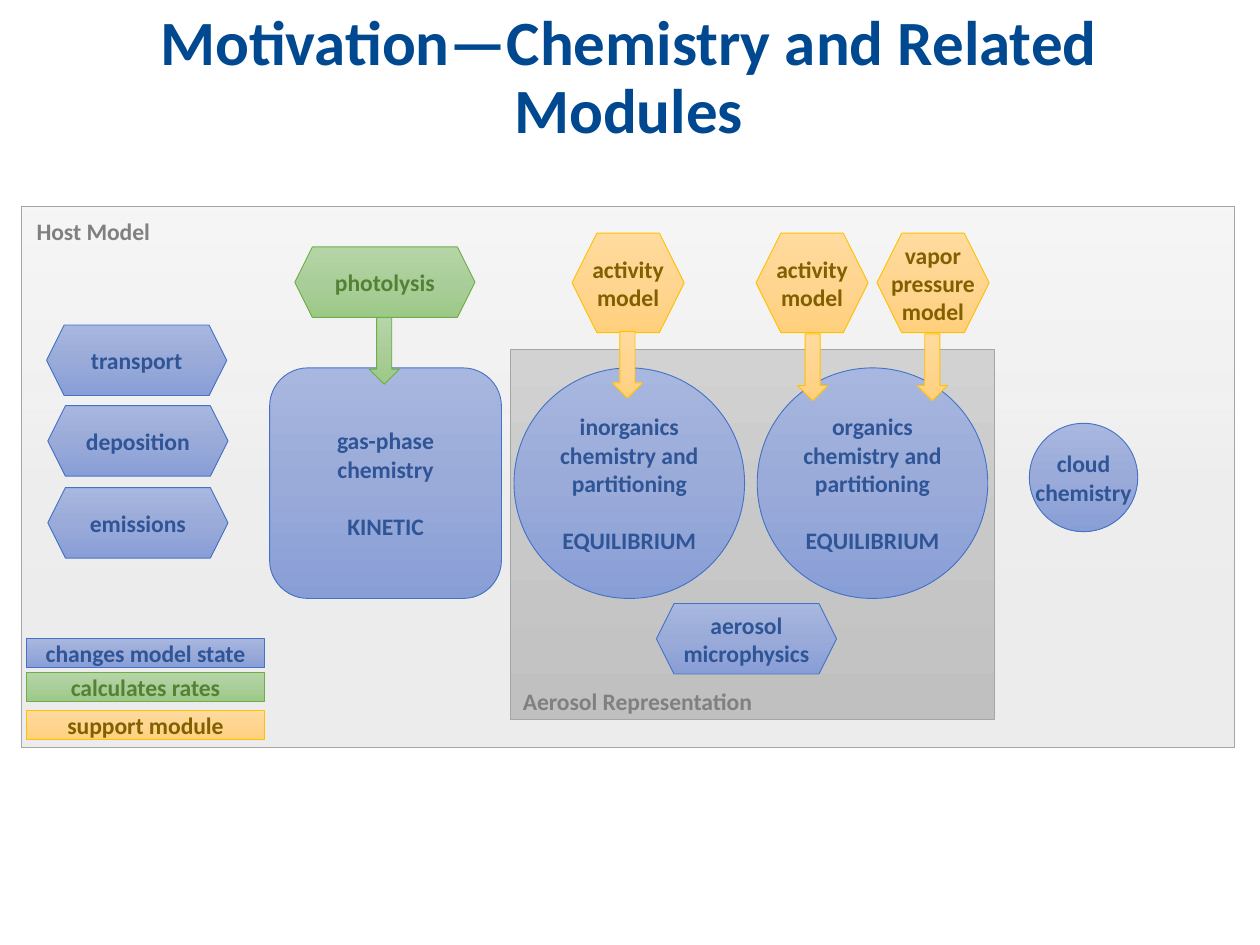
"""Build the slide of chemistry modules inside a host model."""
from dataclasses import dataclass

from pptx import Presentation, util as u
from pptx.dml.color import RGBColor
from pptx.enum import shapes, text
from pptx.oxml import parse_xml
from pptx.oxml.ns import nsdecls

KIND = shapes.MSO_SHAPE


@dataclass(frozen=True)
class Theme:
    font: str = "Calibri"
    title_size: float = 36
    body_size: float = 13.5
    blank_line: float = 16.5
    title: str = "004890"
    label: str = "808080"


@dataclass(frozen=True)
class Style:
    stops: tuple
    line: str
    ink: str
    opacity: tuple = (100, 100, 100)


THEME = Theme()
GREYS = ("D2D2D2", "C8C8C8", "C0C0C0")
STYLES = {
    "host": Style(GREYS, "A5A5A5", THEME.label, (20, 30, 30)),
    "aerosol": Style(GREYS, "A5A5A5", THEME.label),
    "state": Style(("A8B7DF", "9AABD9", "889ED7"), "4472C4", "2F5597"),
    "rates": Style(("B5D5A7", "AACE9A", "9CC987"), "70AD47", "548235"),
    "support": Style(("FFDB9E", "FFD590", "FFD07C"), "FFC000", "806000"),
}

TITLE = "Motivation—Chemistry and Related Modules"
PANELS = [
    ("host", (0.17, 1.64, 9.63, 4.29), "Host Model", (0.2, 1.67, 1.46, 0.33)),
    ("aerosol", (4.05, 2.77, 3.84, 2.94), "Aerosol Representation", (4.06, 5.4, 2.46, 0.33)),
]
SUPPORT_MODULES = [
    (4.54, ["activity", "model"]),
    (6, ["activity", "model"]),
    (6.96, ["vapor", "pressure", "model"]),
]
WIDE_HEXAGONS = [
    ("state", 0.37, 2.58, ["transport"]),
    ("state", 0.38, 3.22, ["deposition"]),
    ("state", 0.38, 3.87, ["emissions"]),
    ("rates", 2.34, 1.96, ["photolysis"]),
    ("state", 5.21, 4.79, ["aerosol", "microphysics"]),
]
CORE_MODULES = [
    (KIND.ROUNDED_RECTANGLE, 2.14, 1.84, ["gas-phase chemistry"], "KINETIC"),
    (KIND.OVAL, 4.08, 1.83, ["inorganics", "chemistry and partitioning"], "EQUILIBRIUM"),
    (KIND.OVAL, 6.01, 1.83, ["organics chemistry and partitioning"], "EQUILIBRIUM"),
]
ARROWS = [
    ("support", 7.28, 2.65),
    ("support", 6.33, 2.65),
    ("support", 4.86, 2.63),
    ("rates", 2.93, 2.52),
]
LEGEND = [
    ("state", 5.07, "changes model state"),
    ("rates", 5.34, "calculates rates"),
    ("support", 5.64, "support module"),
]


def inches(place):
    return [u.Inches(value) for value in place]


def set_font(para, size, color):
    para.font.name = THEME.font
    para.font.size = u.Pt(size)
    para.font.bold = True
    para.font.color.rgb = RGBColor.from_string(color)


def write(frame, lines, color, align, inset, wrap=True):
    frame.word_wrap = wrap
    frame.margin_left = frame.margin_right = u.Inches(inset)
    for index, line in enumerate(lines):
        para = frame.add_paragraph() if index else frame.paragraphs[0]
        para.text = line
        para.alignment = align
        set_font(para, THEME.body_size, color)


def gradient(style):
    stops = "".join(
        f'<a:gs pos="{pos}000"><a:srgbClr val="{color}"><a:alpha val="{alpha}000"/></a:srgbClr></a:gs>'
        for pos, color, alpha in zip((0, 50, 100), style.stops, style.opacity))
    return parse_xml(f'<a:gradFill {nsdecls("a")} rotWithShape="1"><a:gsLst>{stops}</a:gsLst>'
                     '<a:lin ang="5400000" scaled="0"/></a:gradFill>')


def add_block(page, kind, place, style_name, lines=(), wrap=True):
    style = STYLES[style_name]
    shape = page.shapes.add_shape(kind, *inches(place))
    shape._element.spPr.insert(2, gradient(style))
    shape.line.color.rgb = RGBColor.from_string(style.line)
    shape.line.width = u.Pt(0.5)
    shape.shadow.inherit = False
    shape.text_frame.vertical_anchor = text.MSO_ANCHOR.MIDDLE
    write(shape.text_frame, lines, style.ink, text.PP_ALIGN.CENTER, 0.07, wrap)
    return shape


def add_title(page):
    title = page.shapes.title
    title.left, title.top, title.width, title.height = inches((0.38, 0.17, 9.22, 0.92))
    frame = title.text_frame
    frame.text = TITLE
    frame.auto_size = text.MSO_AUTO_SIZE.NONE
    frame.vertical_anchor = text.MSO_ANCHOR.MIDDLE
    para = frame.paragraphs[0]
    para.alignment = text.PP_ALIGN.CENTER
    para.line_spacing = 0.9
    set_font(para, THEME.title_size, THEME.title)


def main():
    deck = Presentation()
    deck.slide_width, deck.slide_height = inches((10, 7.5))
    page = deck.slides.add_slide(deck.slide_layouts[5])
    add_title(page)

    for style, place, label, label_place in PANELS:
        add_block(page, KIND.RECTANGLE, place, style)
        box = page.shapes.add_textbox(*inches(label_place))
        write(box.text_frame, [label], THEME.label, text.PP_ALIGN.LEFT, 0.09)
    for left, lines in SUPPORT_MODULES:
        add_block(page, KIND.HEXAGON, (left, 1.85, 0.89, 0.79), "support", lines, wrap=False)
    for style, left, top, lines in WIDE_HEXAGONS:
        add_block(page, KIND.HEXAGON, (left, top, 1.43, 0.56), style, lines, wrap=False)
    for kind, left, width, lines, method in CORE_MODULES:
        block = add_block(page, kind, (left, 2.92, width, 1.83), "state", [*lines, method])
        block.text_frame.paragraphs[-1].space_before = u.Pt(THEME.blank_line)
    add_block(page, KIND.OVAL, (8.17, 3.36, 0.86, 0.86), "state", ["cloud", "chemistry"], wrap=False)
    for style, left, top in ARROWS:
        add_block(page, KIND.DOWN_ARROW, (left, top, 0.24, 0.53), style)
    for style, top, line in LEGEND:
        add_block(page, KIND.RECTANGLE, (0.21, top, 1.89, 0.23), style, [line])

    deck.save("out.pptx")


if __name__ == "__main__":
    main()
